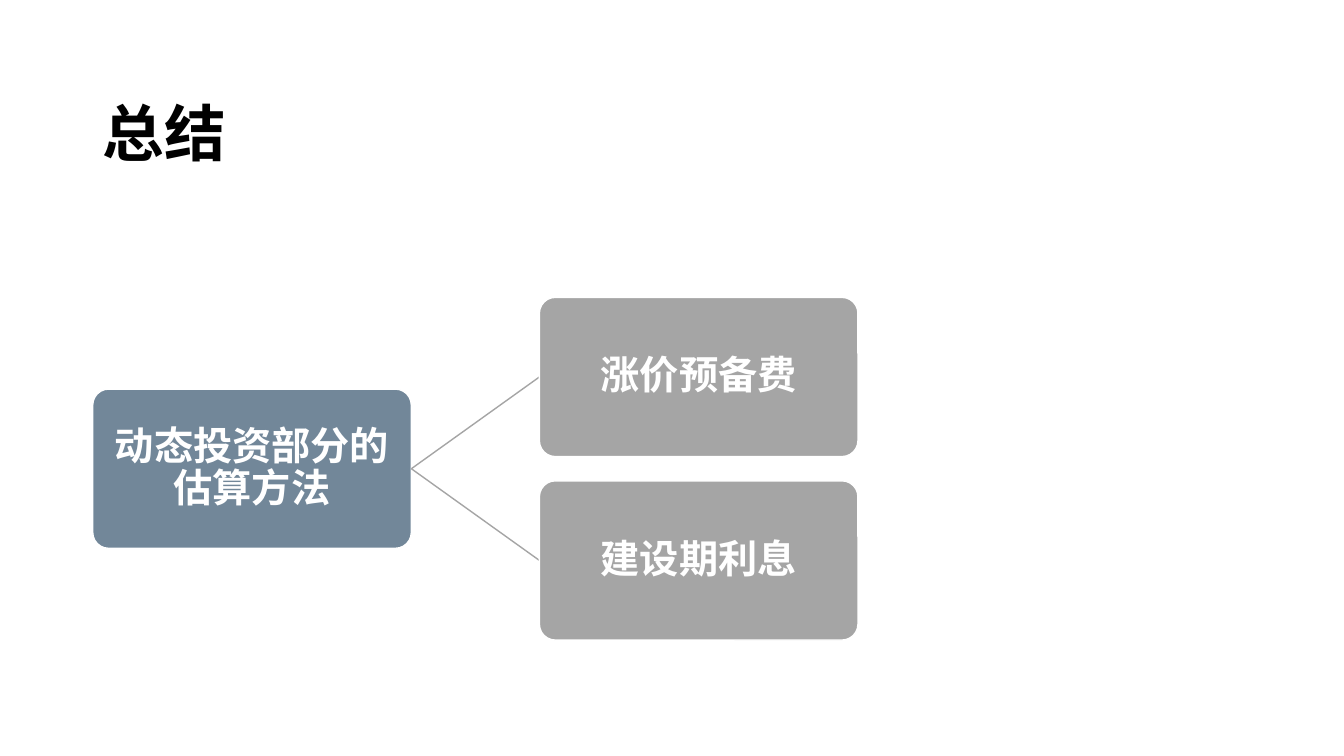
from dataclasses import dataclass

from lxml import etree
from pptx import Presentation
from pptx.dml.color import RGBColor
from pptx.enum.shapes import MSO_CONNECTOR, MSO_SHAPE
from pptx.enum.text import MSO_ANCHOR, PP_ALIGN
from pptx.oxml.ns import qn
from pptx.shapes.autoshape import Shape
from pptx.slide import Slide
from pptx.text.text import TextFrame
from pptx.util import Inches, Pt

ROUND = MSO_SHAPE.ROUNDED_RECTANGLE
STRAIGHT = MSO_CONNECTOR.STRAIGHT
MIDDLE = MSO_ANCHOR.MIDDLE
CENTER = PP_ALIGN.CENTER
JUSTIFY = PP_ALIGN.JUSTIFY


@dataclass(frozen=True)
class Theme:
    font: str = "Times New Roman"
    black: RGBColor = RGBColor(0x00, 0x00, 0x00)
    white: RGBColor = RGBColor(0xFF, 0xFF, 0xFF)
    blue: RGBColor = RGBColor(0x72, 0x87, 0x99)
    gray: RGBColor = RGBColor(0xA5, 0xA5, 0xA5)
    title: int = 44
    body: int = 28
    line: int = 1


@dataclass(frozen=True)
class Node:
    text: str
    left: float
    top: float
    fill: RGBColor


THEME = Theme()

# Tree layout, in inches
WIDTH, HEIGHT = 3.16, 1.58
LEFT, MID = 0.92, 4.65
INDENT = LEFT + WIDTH + 1.27
STEP = 1.82
INSET = 0.07

ROOT = Node("动态投资部分的估算方法", LEFT, MID - HEIGHT / 2, THEME.blue)
LEAVES = ["涨价预备费", "建设期利息"]


def set_text(frame: TextFrame, text: str, size: int, color: RGBColor,
             align: PP_ALIGN, spacing: float) -> None:
    frame.word_wrap = True
    frame.vertical_anchor = MIDDLE
    frame.text = text
    para = frame.paragraphs[0]
    para.alignment = align
    para.line_spacing = spacing
    font = para.runs[0].font
    font.name = THEME.font
    font.size = Pt(size)
    font.bold = True
    font.color.rgb = color


def add_title(slide: Slide, text: str) -> None:
    box = slide.shapes.add_textbox(
        Inches(0.92), Inches(0.4), Inches(11.5), Inches(1.45))
    set_text(box.text_frame, text, THEME.title, THEME.black, JUSTIFY, 1.5)


def add_node(slide: Slide, node: Node) -> Shape:
    box = slide.shapes.add_shape(
        ROUND, Inches(node.left), Inches(node.top),
        Inches(WIDTH), Inches(HEIGHT))
    box.adjustments[0] = 0.1
    box.shadow.inherit = False
    box.fill.solid()
    box.fill.fore_color.rgb = node.fill
    box.line.color.rgb = THEME.white
    box.line.width = Pt(THEME.line)
    frame = box.text_frame
    frame.margin_left = frame.margin_right = Inches(INSET)
    frame.margin_top = frame.margin_bottom = Inches(INSET)
    set_text(frame, node.text, THEME.body, THEME.white, CENTER, 0.9)
    return box


def add_link(slide: Slide, start: Node, end: Node) -> None:
    link = slide.shapes.add_connector(
        STRAIGHT, Inches(start.left + WIDTH), Inches(start.top + HEIGHT / 2),
        Inches(end.left), Inches(end.top + HEIGHT / 2))
    link.line.color.rgb = THEME.gray
    link.line.width = Pt(THEME.line)
    etree.SubElement(link._element.spPr, qn("a:effectLst"))


def main() -> None:
    deck = Presentation()
    deck.slide_width, deck.slide_height = Inches(13.33), Inches(7.5)
    slide = deck.slides.add_slide(deck.slide_layouts[6])

    add_title(slide, "总结")

    # Root on the left, leaves spread evenly around its middle
    add_node(slide, ROOT)
    for i, text in enumerate(LEAVES):
        shift = (i - (len(LEAVES) - 1) / 2) * STEP
        leaf = Node(text, INDENT, ROOT.top + shift, THEME.gray)
        add_link(slide, ROOT, leaf)
        add_node(slide, leaf)

    deck.save("out.pptx")


if __name__ == "__main__":
    main()
